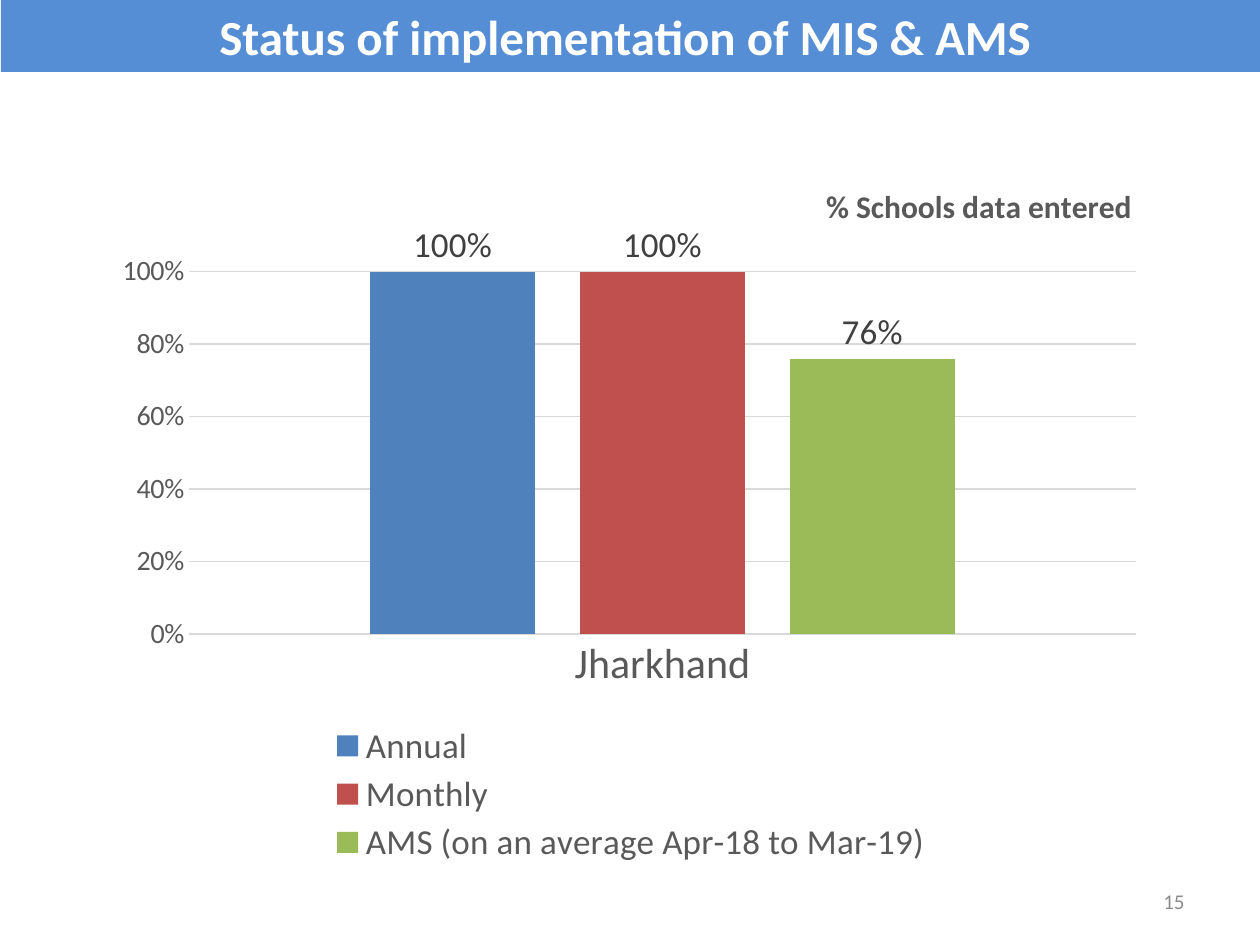
import pptx
import pptx.chart.data
import pptx.dml.color
import pptx.enum.chart
import pptx.enum.shapes
import pptx.enum.text
import pptx.oxml
import pptx.oxml.ns
import pptx.util

PX = 914400 // 126
GREY = "595959"
RULE = "D9D9D9"
SERIES = [
    ("Annual", 1, "4F81BD"),
    ("Monthly", 1, "C0504D"),
    ("AMS (on an average Apr-18 to Mar-19)", 0.76, "9BBB59"),
]


def emu(*sizes):
    return [pptx.util.Emu(size * PX) for size in sizes]


def tint(text):
    return pptx.dml.color.RGBColor.from_string(text)


def style(font, size, color, bold=False):
    font.name = "Calibri"
    font.size = pptx.util.Pt(size)
    font.bold = bold
    font.color.rgb = tint(color)


def paint(fill, color):
    fill.solid()
    fill.fore_color.rgb = tint(color)


def rule(line):
    line.color.rgb = tint(RULE)
    line.width = pptx.util.Pt(0.75)


def write(frame, text, align, size, color, bold=False):
    frame.word_wrap = True
    frame.vertical_anchor = pptx.enum.text.MSO_ANCHOR.MIDDLE
    para = frame.paragraphs[0]
    para.text = text
    para.alignment = align
    style(para.font, size, color, bold)


def banner(slide, box):
    kind = pptx.enum.shapes.MSO_SHAPE.RECTANGLE
    bar = slide.shapes.add_shape(kind, *emu(*box))
    bar.shadow.inherit = False
    paint(bar.fill, "558ED5")
    bar.line.fill.background()
    write(bar.text_frame, "Status of implementation of MIS & AMS ",
          pptx.enum.text.PP_ALIGN.CENTER, 28, "FFFFFF", True)


def number(slide, box):
    note = slide.shapes.add_textbox(*emu(*box))
    write(note.text_frame, "15", pptx.enum.text.PP_ALIGN.RIGHT, 12, "8C8C8C")


def place(part, spot, box, inner=False):
    qn = pptx.oxml.ns.qn
    for old in part.findall(qn("c:layout")):
        part.remove(old)
    x, y, w, h = box
    rows = [("layoutTarget", "inner")] if inner else []
    rows += [("xMode", "edge"), ("yMode", "edge"), ("x", x), ("y", y)]
    if w:
        rows += [("w", w), ("h", h)]
    body = "".join(f'<c:{tag} val="{val}"/>' for tag, val in rows)
    space = pptx.oxml.ns.nsdecls("c")
    layout = pptx.oxml.parse_xml(
        f"<c:layout {space}><c:manualLayout>{body}</c:manualLayout></c:layout>")
    part.insert(spot, layout)


def graph(slide, box):
    enum = pptx.enum.chart
    data = pptx.chart.data.CategoryChartData(number_format="0%")
    data.categories = ["Jharkhand"]
    for name, value, color in SERIES:
        data.add_series(name, [value])
    kind = enum.XL_CHART_TYPE.COLUMN_CLUSTERED
    chart = slide.shapes.add_chart(kind, *emu(*box), data).chart
    style(chart.font, 10, "000000")

    chart.has_title = True
    title = chart.chart_title
    para = title.text_frame.paragraphs[0]
    para.text = "% Schools data entered"
    style(para.font, 18, GREY, True)
    place(title._element, 1, (0.68, 0.02, 0, 0))

    plot = chart.plots[0]
    plot.vary_by_categories = False
    plot.gap_width = 219
    plot.overlap = -27
    for series, (name, value, color) in zip(plot.series, SERIES):
        paint(series.format.fill, color)
        series.invert_if_negative = False
        labels = series.data_labels
        labels.show_value = True
        labels.number_format = "0%"
        labels.number_format_is_linked = False
        labels.position = enum.XL_LABEL_POSITION.OUTSIDE_END
        style(labels.font, 20, "404040")
    place(chart._chartSpace.chart.plotArea, 0, (0.08, 0.15, 0.9, 0.51), True)

    for axis, size in ((chart.category_axis, 24), (chart.value_axis, 16)):
        axis.major_tick_mark = enum.XL_TICK_MARK.NONE
        axis.minor_tick_mark = enum.XL_TICK_MARK.NONE
        style(axis.tick_labels.font, size, GREY)
    rule(chart.category_axis.format.line)
    scale = chart.value_axis
    scale.minimum_scale = 0
    scale.maximum_scale = 1
    scale.major_unit = 0.2
    scale.tick_labels.number_format = "0%"
    scale.tick_labels.number_format_is_linked = False
    scale.format.line.fill.background()
    scale.has_major_gridlines = True
    rule(scale.major_gridlines.format.line)

    chart.has_legend = True
    legend = chart.legend
    legend.position = enum.XL_LEGEND_POSITION.BOTTOM
    legend.include_in_layout = False
    style(legend.font, 20, GREY)
    place(legend._element, 1, (0.21, 0.78, 0.58, 0.21))


def main():
    deck = pptx.Presentation()
    deck.slide_width, deck.slide_height = emu(1260, 945)
    slide = deck.slides.add_slide(deck.slide_layouts[6])
    banner(slide, (1, 0, 1259, 72))
    number(slide, (903, 876, 294, 50))
    graph(slide, (105, 165, 1052, 711))
    deck.save("out.pptx")


if __name__ == "__main__":
    main()
